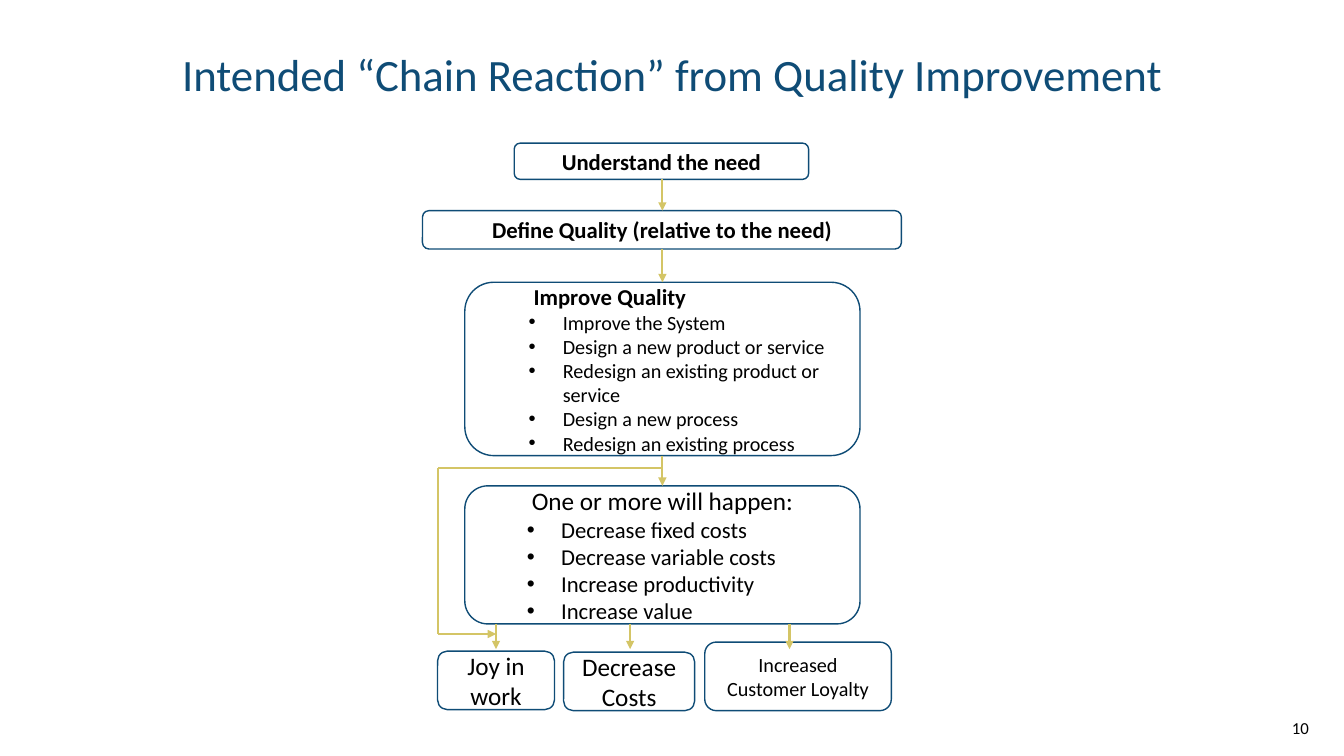
from dataclasses import dataclass

from lxml import etree
from pptx import Presentation
from pptx.dml.color import RGBColor
from pptx.enum.shapes import MSO_CONNECTOR, MSO_SHAPE
from pptx.enum.text import MSO_ANCHOR, PP_ALIGN
from pptx.oxml.ns import qn
from pptx.util import Inches, Pt

ROUNDED = MSO_SHAPE.ROUNDED_RECTANGLE
STRAIGHT = MSO_CONNECTOR.STRAIGHT
MIDDLE = MSO_ANCHOR.MIDDLE
LEFT, CENTER, RIGHT = PP_ALIGN.LEFT, PP_ALIGN.CENTER, PP_ALIGN.RIGHT


@dataclass(frozen=True)
class Theme:
    """Colours, font and type sizes of the slide."""
    navy: RGBColor = RGBColor(0x0F, 0x4C, 0x76)
    gold: RGBColor = RGBColor(0xD4, 0xC5, 0x66)
    black: RGBColor = RGBColor(0, 0, 0)
    white: RGBColor = RGBColor(0xFF, 0xFF, 0xFF)
    font: str = "Calibri"
    title: float = 32
    large: float = 18
    medium: float = 16.2
    small: float = 14.4
    number: float = 12


THEME = Theme()


def add_run(p, text, size, color=THEME.black, bold=False):
    """Add one formatted run to a paragraph."""
    r = p.add_run()
    r.text = text
    r.font.name = THEME.font
    r.font.size = Pt(size)
    r.font.bold = bold
    r.font.color.rgb = color


def add_text(s, box, text, size, align, color=THEME.black):
    """Add a text box with a single paragraph."""
    tf = s.shapes.add_textbox(*map(Inches, box)).text_frame
    tf.word_wrap = True
    tf.vertical_anchor = MIDDLE
    p = tf.paragraphs[0]
    p.alignment = align
    add_run(p, text, size, color)


def add_box(s, box):
    """Add an outlined rounded box and return its text frame."""
    sp = s.shapes.add_shape(ROUNDED, *map(Inches, box))
    sp.shadow.inherit = False
    sp.fill.solid()
    sp.fill.fore_color.rgb = THEME.white
    sp.line.color.rgb = THEME.navy
    sp.line.width = Pt(1)
    tf = sp.text_frame
    tf.word_wrap = True
    tf.vertical_anchor = MIDDLE
    return tf


def add_step(s, box, text, size, bold=False):
    """Add a box with one centred label."""
    p = add_box(s, box).paragraphs[0]
    p.alignment = CENTER
    add_run(p, text, size, bold=bold)


def indent(p, margin, first=0.0):
    """Set a second-level paragraph's left margin and first-line indent."""
    p.level = 1
    p.alignment = LEFT
    pPr = p._p.get_or_add_pPr()
    pPr.set("marL", str(Inches(margin)))
    pPr.set("indent", str(Inches(first)))
    return pPr


def add_list_step(s, box, heading, items, size, item_size, bold=False):
    """Add a box with a heading and a bulleted list."""
    tf = add_box(s, box)
    p = tf.paragraphs[0]
    indent(p, 0.5)
    add_run(p, heading, size, bold=bold)
    for item in items:
        p = tf.add_paragraph()
        pPr = indent(p, 0.79, -0.34)
        etree.SubElement(pPr, qn("a:buFont")).set("typeface", "Arial")
        etree.SubElement(pPr, qn("a:buChar")).set("char", "•")
        add_run(p, item, item_size)


def add_line(s, x1, y1, x2, y2, arrow=True):
    """Add a gold line, with an arrowhead at its end unless told otherwise."""
    line = s.shapes.add_connector(STRAIGHT, *map(Inches, (x1, y1, x2, y2)))
    line.line.color.rgb = THEME.gold
    line.line.width = Pt(1.5)
    if arrow:
        ln = line.line._get_or_add_ln()
        etree.SubElement(ln, qn("a:tailEnd")).set("type", "triangle")
    etree.SubElement(line._element.spPr, qn("a:effectLst"))


def add_steps(s):
    """Add the boxes of the chain, from the need to the outcomes."""
    add_step(s, (5.1, 1.42, 2.92, 0.36), "Understand the need", THEME.medium, True)
    add_step(s, (4.19, 2.09, 4.75, 0.38), "Define Quality (relative to the need)",
             THEME.medium, True)
    add_list_step(s, (4.61, 2.8, 3.92, 1.72), "Improve Quality",
                  ("Improve the System", "Design a new product or service",
                   "Redesign an existing product or service",
                   "Design a new process", "Redesign an existing process"),
                  THEME.medium, THEME.small, True)
    add_list_step(s, (4.61, 4.82, 3.92, 1.37), "One or more will happen:",
                  ("Decrease fixed costs", "Decrease variable costs",
                   "Increase productivity", "Increase value"),
                  THEME.large, THEME.medium)
    add_step(s, (6.99, 6.37, 1.85, 0.68), "Increased Customer Loyalty", THEME.small)
    add_step(s, (5.59, 6.47, 1.3, 0.58), "Decrease Costs", THEME.large)
    add_step(s, (4.34, 6.46, 1.16, 0.58), "Joy in work", THEME.large)


def add_arrows(s):
    """Add the arrows down the chain and the bypass to joy in work."""
    center, joy, bypass = 6.57, 4.92, 4.34
    for top, bottom in ((1.78, 2.09), (2.47, 2.8), (4.52, 4.82)):
        add_line(s, center, top, center, bottom)
    for x in (6.25, 7.83, joy):
        add_line(s, x, 6.19, x, 6.44)
    add_line(s, center, 4.64, bypass, 4.64, arrow=False)
    add_line(s, bypass, 4.64, bypass, 6.29, arrow=False)
    add_line(s, bypass, 6.29, joy, 6.29)


def main():
    """Build the slide and save it."""
    prs = Presentation()
    prs.slide_width, prs.slide_height = Inches(13.33), Inches(7.5)
    s = prs.slides.add_slide(prs.slide_layouts[6])
    add_text(s, (11.65, 7.02, 1.43, 0.4), "10", THEME.number, RIGHT)
    add_text(s, (0.67, 0.3, 12, 0.87),
             "Intended “Chain Reaction” from Quality Improvement",
             THEME.title, CENTER, THEME.navy)
    add_steps(s)
    add_arrows(s)
    prs.save("out.pptx")


if __name__ == "__main__":
    main()
